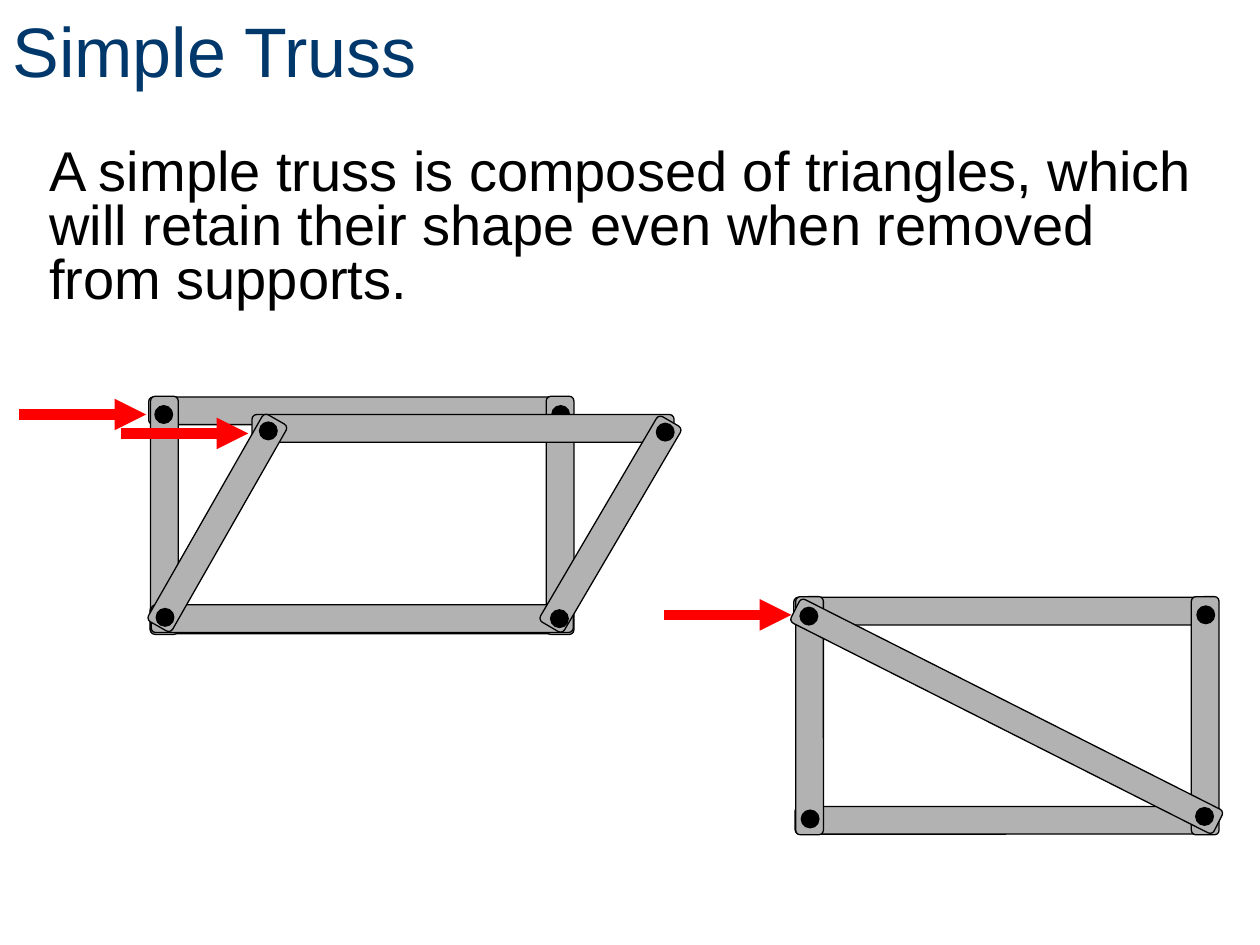
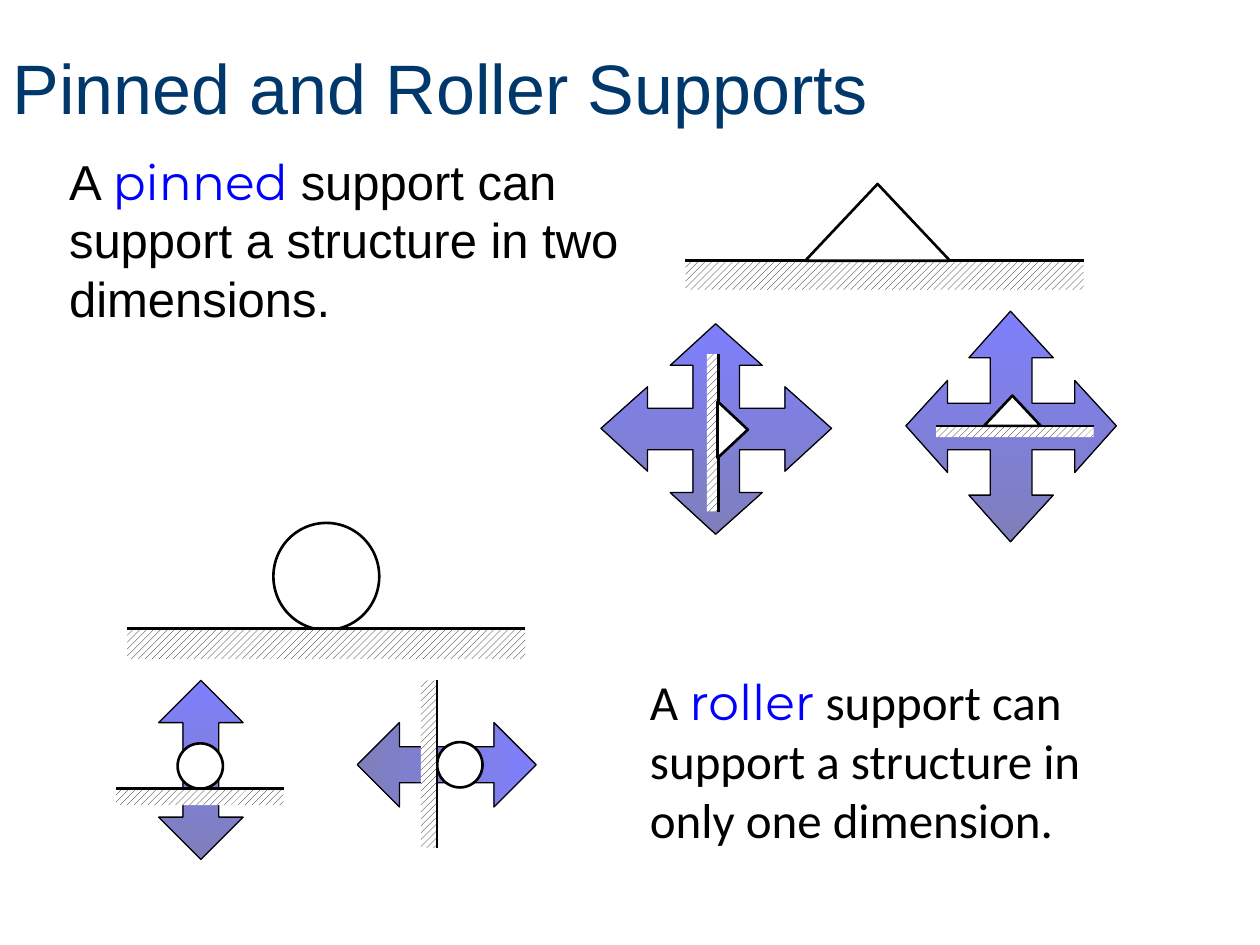
"""Builds two slides on simple trusses and on pinned and roller supports."""
from lxml import etree
from pptx import Presentation
from pptx.dml.color import RGBColor
from pptx.enum.dml import MSO_PATTERN
from pptx.enum.shapes import MSO_CONNECTOR, MSO_SHAPE
from pptx.enum.text import MSO_ANCHOR, MSO_AUTO_SIZE, PP_ALIGN
from pptx.oxml.ns import qn
from pptx.util import Pt

PX = 9144
BLACK, WHITE, GREY = "000000", "FFFFFF", "B2B2B2"
NAVY, BLUE, DARK_BLUE, RED = "00386B", "0000FF", "000076", "FF0000"
ARIAL, CALIBRI, MONTSERRAT = "Arial", "Calibri", "Montserrat"
THIN, MEDIUM, THICK = 0.75, 1.5, 6
TITLE_AND_BODY, TITLE_ONLY = 1, 5
BAR, OVAL, RECT = MSO_SHAPE.ROUNDED_RECTANGLE, MSO_SHAPE.OVAL, MSO_SHAPE.RECTANGLE
TRIANGLE, TWO_WAY = MSO_SHAPE.ISOSCELES_TRIANGLE, MSO_SHAPE.UP_DOWN_ARROW
HATCH = MSO_PATTERN.WIDE_UPWARD_DIAGONAL
STRAIGHT = MSO_CONNECTOR.STRAIGHT


def rgb(value):
    return RGBColor.from_string(value)


def emu(*lengths):
    return [int(length * PX) for length in lengths]


class Deck:
    def __init__(self):
        self.prs = Presentation()
        self.prs.slide_width, self.prs.slide_height = emu(1000, 750)
        self.slide = None

    def new_slide(self, layout, title, top):
        self.slide = self.prs.slides.add_slide(self.prs.slide_layouts[layout])
        sp = self.slide.shapes.title
        self.place(sp, 0, top, 900, 78)
        sp.text_frame.vertical_anchor = MSO_ANCHOR.MIDDLE
        self.set_runs(sp, 40, [(title, ARIAL, NAVY)])

    def place(self, sp, x, y, w, h):
        sp.left, sp.top, sp.width, sp.height = emu(x, y, w, h)

    def set_runs(self, sp, size, parts):
        tf = sp.text_frame
        tf.word_wrap = True
        tf.auto_size = MSO_AUTO_SIZE.NONE
        p = tf.paragraphs[0]
        p.alignment = PP_ALIGN.LEFT
        for text, font, color in parts:
            r = p.add_run()
            r.text = text
            r.font.size = Pt(size)
            r.font.name = font
            r.font.color.rgb = rgb(color)
        return p

    def body(self, x, y, w, h, text):
        sp = self.slide.placeholders[1]
        self.place(sp, x, y, w, h)
        p = self.set_runs(sp, 32, [(text, ARIAL, BLACK)])
        p.line_spacing = 0.8
        pPr = p._p.get_or_add_pPr()
        pPr.set("marL", "0")
        pPr.set("indent", "0")
        etree.SubElement(pPr, qn("a:buNone"))

    def text_box(self, x, y, w, h, parts):
        self.set_runs(self.slide.shapes.add_textbox(*emu(x, y, w, h)), 28, parts)

    def outline(self, sp, width):
        sp.shadow.inherit = False
        sp.line.color.rgb = rgb(BLACK)
        sp.line.width = Pt(width)

    def shape(self, kind, x, y, w, h, fill=WHITE, width=MEDIUM, rot=0):
        sp = self.slide.shapes.add_shape(kind, *emu(x, y, w, h))
        sp.rotation = rot
        sp.fill.solid()
        sp.fill.fore_color.rgb = rgb(fill)
        self.outline(sp, width)
        return sp

    def line(self, x1, y1, x2, y2, color=BLACK, width=MEDIUM, arrow=False):
        sp = self.slide.shapes.add_connector(STRAIGHT, *emu(x1, y1, x2, y2))
        sp.line.color.rgb = rgb(color)
        sp.line.width = Pt(width)
        spPr = sp._element.spPr
        if arrow:
            etree.SubElement(spPr.find(qn("a:ln")), qn("a:tailEnd"), type="triangle")
        etree.SubElement(spPr, qn("a:effectLst"))

    def bar(self, x, y, w, h=22, rot=0):
        self.shape(BAR, x, y, w, h, GREY, THIN, rot)

    def frame(self, x, y):
        self.bar(x, y, 335)
        self.bar(x + 1, y + 166, 335)
        for dx in (-82, 232):
            self.bar(x + dx, y + 83, 189, rot=270)

    def pins(self, *corners):
        for x, y in corners:
            self.shape(OVAL, x, y, 14, 14, BLACK, THIN)

    def push(self, x, y):
        self.line(x, y, x + 101, y, RED, THICK, arrow=True)

    def fade(self, sp):
        sp.fill.gradient()
        sp.fill.gradient_angle = 270
        for stop, color in zip(sp.fill.gradient_stops, (BLUE, DARK_BLUE)):
            stop.color.rgb = rgb(color)
        for clr in sp._element.spPr.find(qn("a:gradFill")).iter(qn("a:srgbClr")):
            etree.SubElement(clr, qn("a:alpha"), val="50000")
        self.outline(sp, THIN)

    def four_way_arrow(self, x, y, w, h):
        arm = [(5, 0), (3, 2), (4, 2), (4, 4), (2, 4), (2, 3)]
        grid = []
        for _ in range(4):
            grid += arm
            arm = [(b, 10 - a) for a, b in arm]
        points = [(x + w * a / 10, y + h * b / 10) for a, b in grid]
        builder = self.slide.shapes.build_freeform(*points[0], scale=PX)
        builder.add_line_segments(points[1:], close=True)
        self.fade(builder.convert_to_shape())

    def two_way_arrow(self, x, y, rot=0):
        sp = self.shape(TWO_WAY, x, y, 67, 142, rot=rot)
        sp.adjustments[0], sp.adjustments[1] = 0.5, 0.425
        self.fade(sp)

    def ground(self, x, y, length, depth, upright=False):
        left, top, rot, end = x, y, 0, (x + length, y)
        if upright:
            left, top = x - (depth + length) / 2, y + (length - depth) / 2
            rot, end = 90, (x, y + length)
        sp = self.shape(RECT, left, top, length, depth, rot=rot)
        sp.fill.patterned()
        sp.fill.pattern = HATCH
        sp.fill.fore_color.rgb = rgb(BLACK)
        sp.fill.back_color.rgb = rgb(WHITE)
        sp.line.fill.background()
        self.line(x, y, *end)


def simple_truss(deck):
    deck.new_slide(TITLE_AND_BODY, "Simple Truss", 0)
    deck.body(29, 113, 942, 125, "A simple truss is composed of triangles, which will "
              "retain their shape even when removed from supports.")

    deck.frame(118, 315)
    deck.pins((123, 322), (438, 322))
    deck.push(15, 329)

    deck.bar(200, 329, 335)
    deck.bar(120, 480, 335)
    deck.bar(78, 404, 189, rot=299.7)
    deck.bar(390, 405, 189, rot=300.4)
    deck.pins((206, 335), (521, 336), (124, 483), (437, 484))
    deck.push(96, 344)

    deck.frame(630, 474)
    deck.push(527, 488)
    deck.bar(611, 558, 376, 21, rot=26.8)
    deck.pins((950, 481), (636, 643), (635, 482), (949, 641))


def supports(deck):
    deck.new_slide(TITLE_ONLY, "Pinned and Roller Supports", 30)
    deck.ground(544, 207, 316, 23)
    deck.shape(TRIANGLE, 639, 146, 115, 61)
    deck.text_box(45, 115, 463, 150, [
        ("A ", ARIAL, BLACK), ("pinned ", MONTSERRAT, BLUE),
        ("support can support a structure in two dimensions.", ARIAL, BLACK)])
    deck.text_box(506, 528, 425, 150, [
        ("A ", CALIBRI, BLACK), ("roller", MONTSERRAT, BLUE),
        (" support can support a structure in only one dimension.", CALIBRI, BLACK)])

    deck.four_way_arrow(477, 257, 183, 167)
    deck.ground(570, 281, 125, 9, upright=True)
    deck.shape(TRIANGLE, 559, 329, 45, 24, rot=90)
    deck.four_way_arrow(719, 247, 167, 183)
    deck.ground(743, 338, 125, 9)
    deck.shape(TRIANGLE, 781, 314, 45, 24)

    deck.two_way_arrow(126, 540)
    deck.shape(OVAL, 141, 590, 36, 36)
    deck.ground(92, 626, 133, 13)
    deck.two_way_arrow(321, 536, rot=90)
    deck.shape(OVAL, 347, 589, 36, 36)
    deck.ground(347, 540, 133, 13, upright=True)
    deck.shape(OVAL, 217, 415, 84, 85)
    deck.ground(101, 499, 316, 24)


def main():
    deck = Deck()
    simple_truss(deck)
    supports(deck)
    deck.prs.save("out.pptx")


if __name__ == "__main__":
    main()
